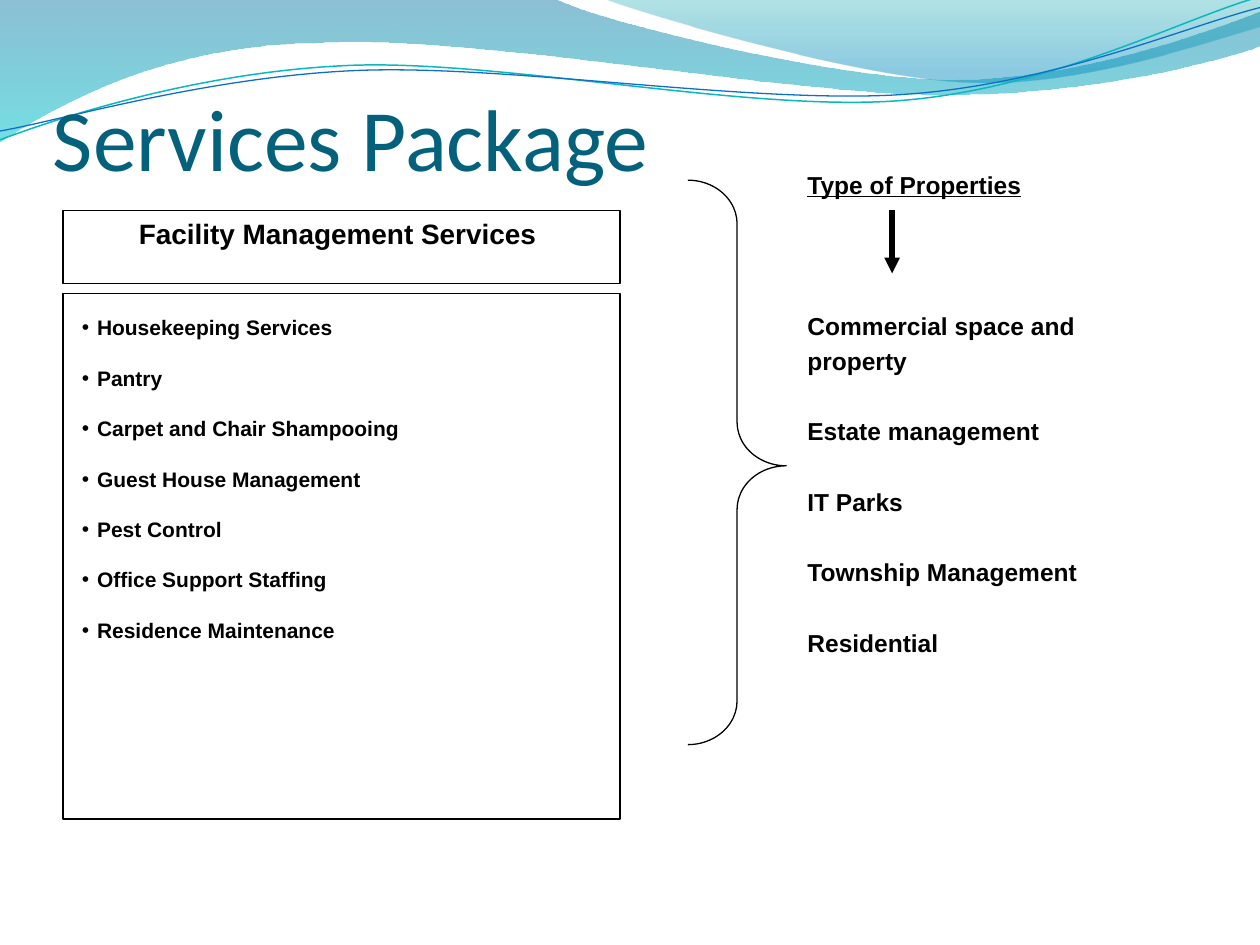
import dataclasses
import typing

import lxml.etree
import pptx
import pptx.dml.color
import pptx.enum.shapes
import pptx.enum.text
import pptx.oxml.ns
import pptx.util

Inches = pptx.util.Inches
Pt = pptx.util.Pt
Point = tuple[float, float]
qn = pptx.oxml.ns.qn


@dataclasses.dataclass(frozen=True)
class Theme:
    ink: str = "000000"
    title: str = "04617B"
    title_font: str = "Calibri"
    text_font: str = "Arial"
    title_size: float = 50
    heading_size: float = 16
    property_size: float = 14
    service_size: float = 12


@dataclasses.dataclass(frozen=True)
class GradientStop:
    position: float
    color: str
    opacity: int


@dataclasses.dataclass(frozen=True)
class Wave:
    start: Point
    segments: tuple[tuple[Point, ...], ...]
    stops: tuple[GradientStop, ...] = ()
    line_color: str = ""
    line_width: float = 0


THEME = Theme()

WAVES = (
    Wave((0, -0.01), (
        ((4.4, -0.01),),
        ((4.76, 0.17), (6.64, 0.63), (7.58, 0.63)),
        ((8.53, 0.63), (9.58, 0.26), (10, 0.09)),
        ((10.01, 0.36),),
        ((9.83, 0.44), (8.7, 0.76), (7.46, 0.75)),
        ((6.22, 0.75), (3.82, 0.28), (2.57, 0.34)),
        ((1.29, 0.35), (0.46, 0.83), (-0.01, 1.13)),
        ((0, -0.01),),
    ), stops=(GradientStop(0, "0074A1", 45), GradientStop(1, "00C6CF", 55))),
    Wave((4.79, -0.01), (
        ((5.09, 0.11), (6.82, 0.62), (7.69, 0.65)),
        ((8.56, 0.69), (9.61, 0.32), (10, 0.21)),
        ((10, 0),),
        ((4.79, -0.01),),
    ), stops=(GradientStop(0, "00A1A9", 30), GradientStop(0.8, "008BBF", 45))),
    Wave((0, 1.11), (
        ((0.48, 0.93), (1.58, 0.57), (2.77, 0.52)),
        ((3.95, 0.47), (5.93, 0.89), (7.13, 0.8)),
        ((8.33, 0.71), (9.38, 0.15), (9.98, -0.02)),
    ), line_color="0AB8BF", line_width=0.85),
    Wave((0, 1.04), (
        ((0.47, 0.96), (1.64, 0.61), (2.83, 0.56)),
        ((4.03, 0.51), (5.97, 0.83), (7.17, 0.75)),
        ((8.36, 0.67), (9.41, 0.21), (10, 0.06)),
    ), line_color="0F6FC6", line_width=0.75),
)

SERVICES = (
    "Housekeeping Services", "Pantry", "Carpet and Chair Shampooing",
    "Guest House Management", "Pest Control", "Office Support Staffing",
    "Residence Maintenance",
)

PROPERTIES = (
    "Commercial space and property", "Estate management", "IT Parks",
    "Township Management", "Residential",
)


def rgb(color: str) -> pptx.dml.color.RGBColor:
    return pptx.dml.color.RGBColor.from_string(color)


def place(box: typing.Any, left: float, top: float, width: float, height: float) -> None:
    box.left, box.top = Inches(left), Inches(top)
    box.width, box.height = Inches(width), Inches(height)


def set_line(item: typing.Any, color: str, width: float) -> None:
    item.line.color.rgb = rgb(color)
    item.line.width = Pt(width)


def bend(shape: typing.Any, segments: tuple[tuple[Point, ...], ...]) -> None:
    edges = iter(shape.element.xpath(".//a:lnTo"))
    for segment in segments:
        first, *others = [next(edges) for _ in segment]
        if others:
            first.tag = qn("a:cubicBezTo")
        for edge in others:
            first.append(edge[0])
            edge.getparent().remove(edge)


def draw_wave(page: typing.Any, wave: Wave) -> None:
    builder = page.shapes.build_freeform(*map(Inches, wave.start))
    points = [tuple(map(Inches, point)) for segment in wave.segments for point in segment]
    builder.add_line_segments(points, close=bool(wave.stops))
    shape = builder.convert_to_shape()
    bend(shape, wave.segments)
    shape.shadow.inherit = False
    if not wave.stops:
        shape.fill.background()
        set_line(shape, wave.line_color, wave.line_width)
        return
    shape.line.fill.background()
    shape.fill.gradient()
    shape.fill.gradient_angle = 270
    for target, stop in zip(shape.fill.gradient_stops, wave.stops):
        target.position = stop.position
        target.color.rgb = rgb(stop.color)
    for color, stop in zip(shape.element.xpath(".//a:gs/a:srgbClr"), wave.stops):
        lxml.etree.SubElement(color, qn("a:alpha"), val=str(stop.opacity * 1000))


def write(box: typing.Any, text: str, *, size: float, font: str = THEME.text_font,
          color: str = THEME.ink, bold: bool = True, underline: bool = False,
          align: typing.Any = pptx.enum.text.PP_ALIGN.LEFT, spacing: float = 1,
          after: float = 0, hanging: float = 0) -> None:
    frame = box.text_frame
    para = frame.add_paragraph() if frame.text else frame.paragraphs[0]
    para.alignment = align
    para.line_spacing = spacing
    para.space_before, para.space_after = Pt(0), Pt(after)
    if hanging:
        properties = para._p.get_or_add_pPr()
        properties.set("marL", str(Inches(hanging)))
        properties.set("indent", str(-Inches(hanging)))
    span = para.add_run()
    span.text = text
    span.font.name, span.font.size = font, Pt(size)
    span.font.bold, span.font.underline = bold, underline
    span.font.color.rgb = rgb(color)


def add_outline(page: typing.Any, kind: typing.Any, left: float, top: float,
                width: float, height: float, weight: float) -> typing.Any:
    shape = page.shapes.add_shape(
        kind, Inches(left), Inches(top), Inches(width), Inches(height))
    shape.shadow.inherit = False
    shape.fill.background()
    set_line(shape, THEME.ink, weight)
    return shape


def add_arrow(page: typing.Any, start: Point, end: Point, weight: float) -> None:
    arrow = page.shapes.add_connector(
        pptx.enum.shapes.MSO_CONNECTOR.STRAIGHT, *map(Inches, (*start, *end)))
    set_line(arrow, THEME.ink, weight)
    lxml.etree.SubElement(arrow.line._get_or_add_ln(), qn("a:tailEnd"), type="triangle")
    lxml.etree.SubElement(arrow.element.spPr, qn("a:effectLst"))


def main() -> None:
    shapes = pptx.enum.shapes.MSO_SHAPE
    anchors = pptx.enum.text.MSO_ANCHOR
    deck = pptx.Presentation()
    deck.slide_width, deck.slide_height = Inches(10), Inches(7.5)
    page = deck.slides.add_slide(deck.slide_layouts[1])
    title, services = page.shapes.title, page.placeholders[1]

    for wave in WAVES:
        draw_wave(page, wave)

    for box in (title, services):
        box.element.getparent().append(box.element)
        box.text_frame.auto_size = pptx.enum.text.MSO_AUTO_SIZE.NONE

    place(title, 0.42, 0.25, 9, 1.25)
    frame = title.text_frame
    frame.vertical_anchor = anchors.BOTTOM
    frame.margin_left = frame.margin_right = frame.margin_bottom = 0
    write(title, "Services Package", size=THEME.title_size, font=THEME.title_font,
          color=THEME.title, bold=False)

    place(services, 0.55, 2.45, 3.28, 4.05)
    services.text_frame.vertical_anchor = anchors.TOP
    for service in SERVICES:
        write(services, service, size=THEME.service_size, after=14.4, hanging=0.12)
    add_outline(page, shapes.RECTANGLE, 0.5, 2.33, 4.42, 4.17, 1)

    properties = page.shapes.add_textbox(0, 0, 0, 0)
    place(properties, 6.31, 1.25, 2.46, 4.34)
    properties.text_frame.word_wrap = True
    write(properties, "Type of Properties", size=THEME.property_size, underline=True,
          spacing=1.2, after=60.5)
    for name in PROPERTIES:
        write(properties, name, size=THEME.property_size, spacing=1.2, after=20.1)

    brace = add_outline(page, shapes.RIGHT_BRACE, 5.46, 1.43, 0.78, 4.48, 0.75)
    brace.adjustments[0], brace.adjustments[1] = 0.445, 0.506
    add_arrow(page, (7.08, 1.67), (7.08, 2.17), 3)

    heading = add_outline(page, shapes.RECTANGLE, 0.5, 1.67, 4.42, 0.58, 0.75)
    heading.text_frame.vertical_anchor = anchors.TOP
    write(heading, "Facility Management Services ", size=THEME.heading_size,
          align=pptx.enum.text.PP_ALIGN.CENTER)

    deck.save("out.pptx")


if __name__ == "__main__":
    main()
